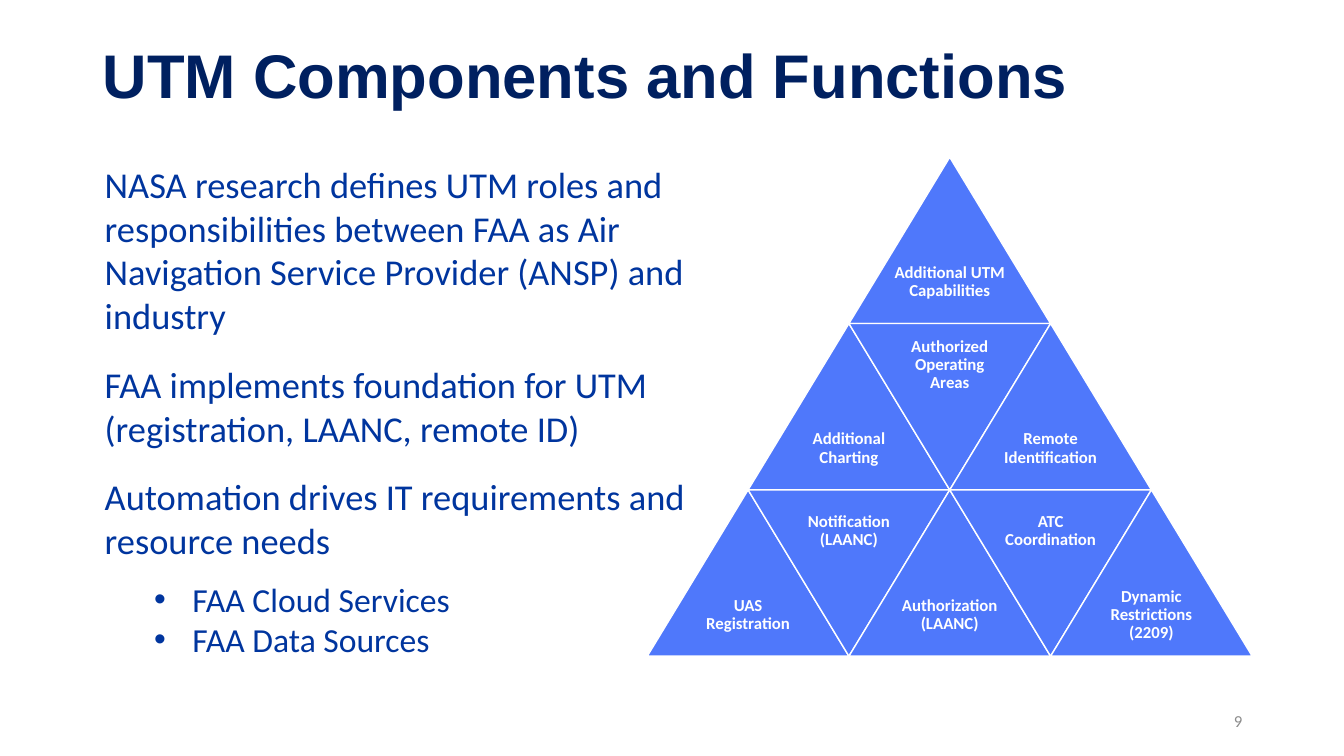
"""Build the UTM components slide with its pyramid of nine triangles."""
from lxml import etree
from pptx import Presentation
from pptx import util as u
from pptx.dml.color import RGBColor
from pptx.enum import text
from pptx.oxml import ns

NAVY = RGBColor(0x00, 0x20, 0x60)
BLUE = RGBColor(0x00, 0x35, 0x9E)
TRIANGLE_BLUE = RGBColor(0x4F, 0x78, 0xFB)
WHITE = RGBColor(0xFF, 0xFF, 0xFF)
GRAY = RGBColor(0x8C, 0x8C, 0x8C)


def add_text_box(left, top, width, height, anchor):
    box = page.shapes.add_textbox(u.Inches(left), u.Inches(top), u.Inches(width), u.Inches(height))
    box.text_frame.word_wrap = True
    box.text_frame.vertical_anchor = anchor
    return box.text_frame


def style_font(para, name, size, color, bold=False):
    for span in para.runs:
        span.font.name = name
        span.font.size = u.Pt(size)
        span.font.color.rgb = color
        span.font.bold = bold


deck = Presentation()
deck.slide_width, deck.slide_height = u.Inches(13.33), u.Inches(7.5)
page = deck.slides.add_slide(deck.slide_layouts[6])

title = add_text_box(0.92, 0.31, 11.5, 0.93, text.MSO_ANCHOR.MIDDLE)
title.text = "UTM Components and Functions"
title.paragraphs[0].line_spacing = 0.9
style_font(title.paragraphs[0], "Arial", 44, NAVY, True)

PYRAMID_ROWS = [
    ["Additional UTM Capabilities"],
    ["Additional Charting", "Authorized Operating Areas", "Remote Identification"],
    ["UAS Registration", "Notification\v(LAANC)", "Authorization (LAANC)",
     "ATC Coordination", "Dynamic Restrictions (2209)"],
]
APEX_X, APEX_Y = 9.42, 1.56
HALF_WIDTH, ROW_HEIGHT = 1, 1.65
pyramid = page.shapes.add_group_shape()
for row, labels in enumerate(PYRAMID_ROWS):
    top = APEX_Y + row * ROW_HEIGHT
    for column, label in enumerate(labels):
        left = APEX_X + (column - row - 1) * HALF_WIDTH
        upright = column % 2 == 0
        base, tip = (top + ROW_HEIGHT, top) if upright else (top, top + ROW_HEIGHT)
        corners = [(left + HALF_WIDTH, tip), (left + 2 * HALF_WIDTH, base)]
        outline = pyramid.shapes.build_freeform(u.Inches(left), u.Inches(base))
        outline.add_line_segments([(u.Inches(x), u.Inches(y)) for x, y in corners], close=True)
        triangle = outline.convert_to_shape()
        triangle.shadow.inherit = False
        triangle.fill.solid()
        triangle.fill.fore_color.rgb = TRIANGLE_BLUE
        triangle.line.color.rgb = WHITE
        triangle.line.width = u.Pt(1)
        frame = triangle.text_frame
        frame.word_wrap = True
        frame.vertical_anchor = text.MSO_ANCHOR.MIDDLE
        frame.margin_left = frame.margin_right = u.Inches(0.45)
        frame.margin_top = u.Inches(0.87 if upright else 0.04)
        frame.margin_bottom = u.Inches(0.04 if upright else 0.87)
        frame.text = label
        para = frame.paragraphs[0]
        para.alignment = text.PP_ALIGN.CENTER
        para.line_spacing = 0.9
        para.space_after = u.Pt(4.2)
        style_font(para, "Calibri", 12, WHITE, True)

STATEMENTS = [
    "NASA research defines UTM roles and responsibilities between FAA as "
    "Air Navigation Service Provider (ANSP) and industry",
    "FAA implements foundation for UTM (registration, LAANC, remote ID)",
    "Automation drives IT requirements and resource needs",
]
RESOURCES = ["FAA Cloud Services", "FAA Data Sources"]
body = add_text_box(0.94, 1.56, 6.81, 5.08, text.MSO_ANCHOR.TOP)
body.text = "\n".join(STATEMENTS + RESOURCES)
for index, para in enumerate(body.paragraphs):
    if index < len(STATEMENTS):
        para.space_before = u.Pt(6 if index else 0)
        para.space_after = u.Pt(12)
        style_font(para, "Calibri", 26, BLUE)
    else:
        para.level = 1
        properties = para._p.get_or_add_pPr()
        properties.set("marL", str(u.Inches(0.87)))
        properties.set("indent", str(u.Inches(-0.38)))
        etree.SubElement(properties, ns.qn("a:buFont"), typeface="Arial")
        etree.SubElement(properties, ns.qn("a:buChar"), char="•")
        style_font(para, "Calibri", 24, BLUE)

number = add_text_box(9.42, 6.95, 3, 0.4, text.MSO_ANCHOR.MIDDLE)
number.text = "9"
number.paragraphs[0].alignment = text.PP_ALIGN.RIGHT
style_font(number.paragraphs[0], "Calibri", 12, GRAY)

deck.save("out.pptx")
